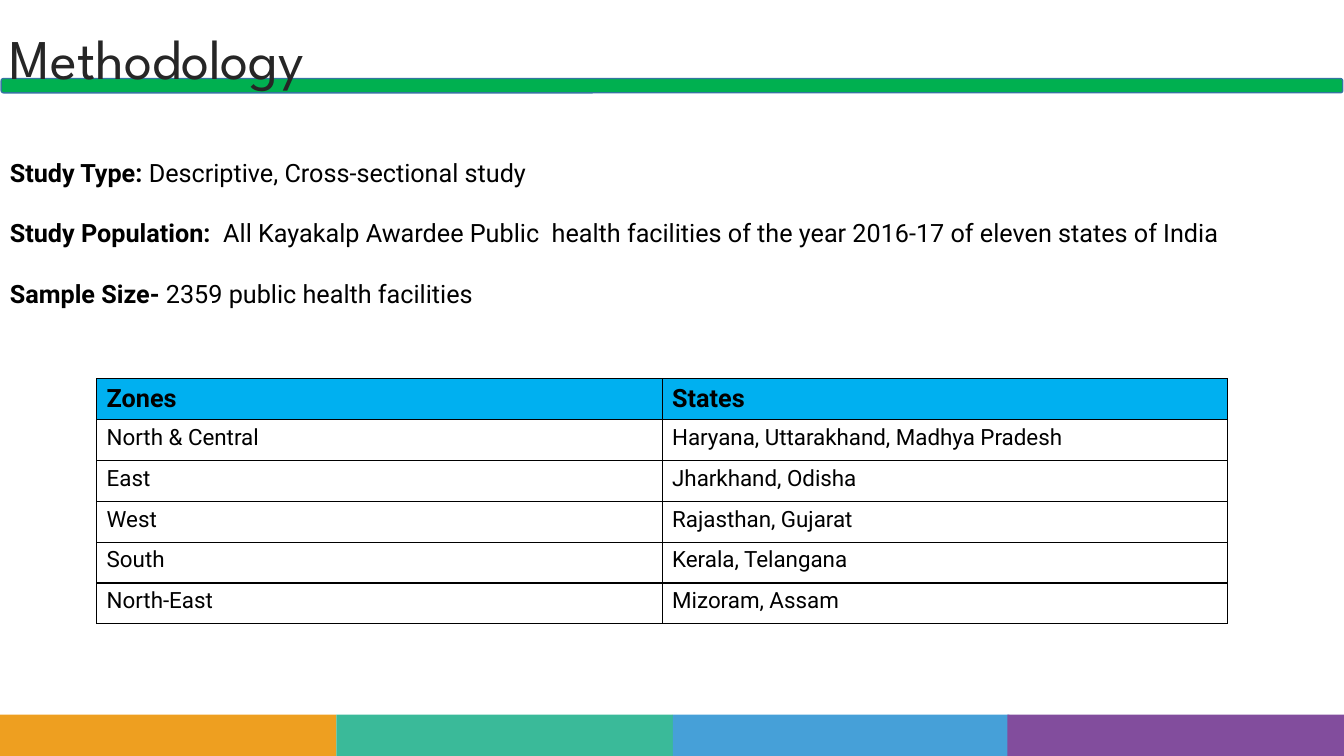
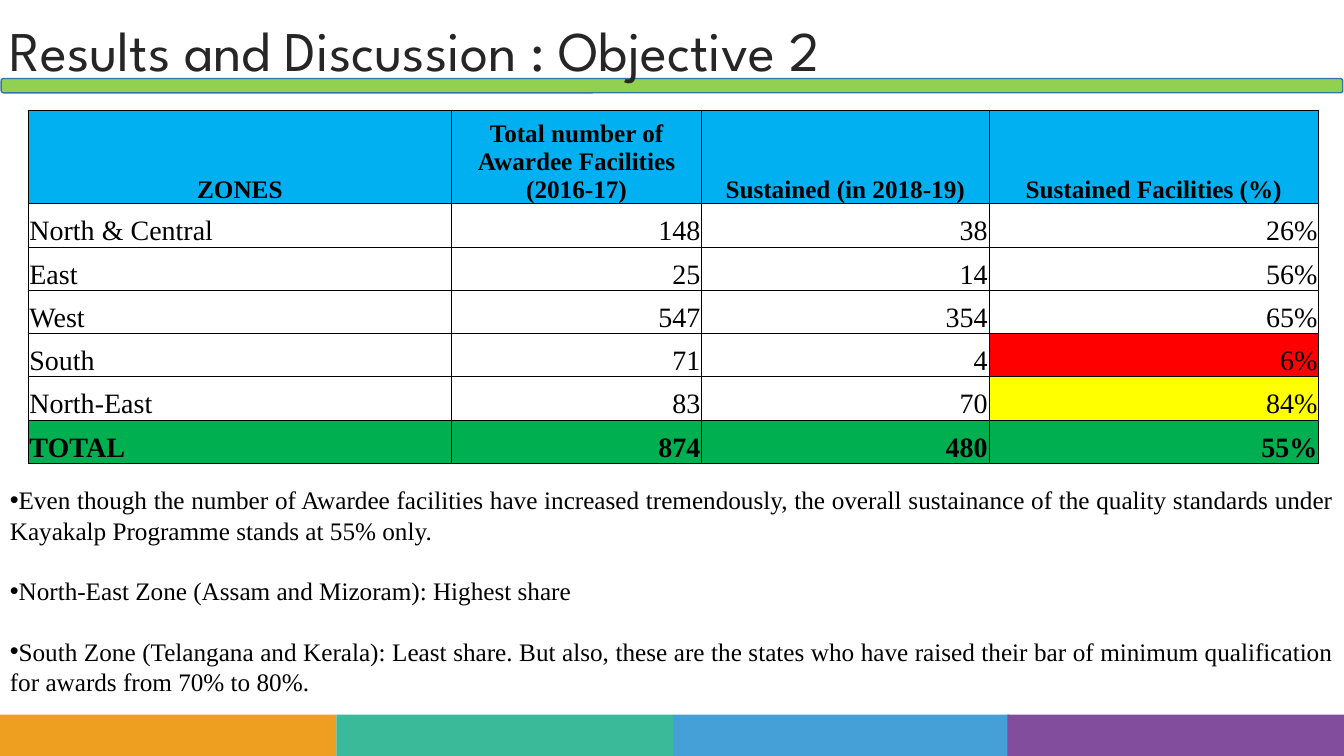
from dataclasses import dataclass

from lxml import etree
from pptx import Presentation
from pptx.dml.color import RGBColor
from pptx.enum.shapes import MSO_SHAPE
from pptx.enum.text import MSO_ANCHOR, PP_ALIGN
from pptx.oxml.ns import qn
from pptx.util import Cm, Pt

RECTANGLE, ROUNDED = MSO_SHAPE.RECTANGLE, MSO_SHAPE.ROUNDED_RECTANGLE
TOP, MIDDLE, BOTTOM = MSO_ANCHOR.TOP, MSO_ANCHOR.MIDDLE, MSO_ANCHOR.BOTTOM
LEFT, CENTER, RIGHT = PP_ALIGN.LEFT, PP_ALIGN.CENTER, PP_ALIGN.RIGHT
JUSTIFY = PP_ALIGN.JUSTIFY

WIDTH, HEIGHT = 33.87, 19.05
COLORS = {
    "title": "262626", "text": "000000", "paper": "FFFFFF", "outline": "3476A0",
    "orange": "EE9F20", "teal": "3ABA99", "blue": "46A0D8", "purple": "824D9D",
    "green": "00B050", "lime": "92D050", "header": "00B0F0",
    "worst": "FF0000", "best": "FFFF00",
}
FOOTER = ("orange", "teal", "blue", "purple")
TITLE_FONT, SANS, SERIF = "League Spartan", "Roboto", "Times New Roman"
BODY_PITCH = 21.6


@dataclass
class TableStyle:
    """Look of one table."""

    font: str
    body_size: int
    border: float
    anchor: int
    header_align: int
    value_align: int
    insets: tuple


def color(name):
    """Return the palette colour of that name."""
    return RGBColor.from_string(COLORS[name])


class Deck:
    """Hold the shared style and the current slide."""

    def __init__(self):
        """Start a widescreen presentation."""
        self.presentation = Presentation()
        self.presentation.slide_width = Cm(WIDTH)
        self.presentation.slide_height = Cm(HEIGHT)
        self.slide = None

    def new_slide(self, title, band, title_top, title_height, title_spacing):
        """Add a slide with its footer, title band and title."""
        self.slide = self.presentation.slides.add_slide(self.presentation.slide_layouts[6])
        part_width = 8.48
        for index, part in enumerate(FOOTER):
            left = min(index * part_width, WIDTH - part_width)
            self.block(RECTANGLE, left, 18.01, part_width, 1.04, part)
        self.block(ROUNDED, 0.03, 1.98, 33.81, 0.36, band, "outline")
        frame = self.text_frame(0, title_top, WIDTH, title_height, MIDDLE)
        heading = frame.paragraphs[0]
        heading.line_spacing = title_spacing
        self.run(heading, title, TITLE_FONT, 40, "title")

    def block(self, preset, left, top, width, height, fill, outline=None):
        """Draw a filled preset shape."""
        shape = self.slide.shapes.add_shape(preset, Cm(left), Cm(top), Cm(width), Cm(height))
        shape.shadow.inherit = False
        shape.fill.solid()
        shape.fill.fore_color.rgb = color(fill)
        if outline:
            shape.line.color.rgb = color(outline)
            shape.line.width = Pt(1)
        else:
            shape.line.fill.background()

    def text_frame(self, left, top, width, height, anchor=TOP):
        """Add a wrapping text box and return its frame."""
        box = self.slide.shapes.add_textbox(Cm(left), Cm(top), Cm(width), Cm(height))
        box.text_frame.word_wrap = True
        box.text_frame.vertical_anchor = anchor
        return box.text_frame

    def run(self, paragraph, text, font, size, ink="text", bold=False):
        """Append one styled run."""
        run = paragraph.add_run()
        run.text = text
        run.font.name = font
        run.font.size = Pt(size)
        run.font.bold = bold
        run.font.color.rgb = color(ink)

    def body(self, top, height, font, items, align=LEFT, bullet=None):
        """Write spaced paragraphs, each a list of (text, bold) runs."""
        frame = self.text_frame(0, top, WIDTH, height)
        for index, item in enumerate(items):
            paragraph = frame.add_paragraph() if index else frame.paragraphs[0]
            paragraph.alignment = align
            paragraph.line_spacing = Pt(BODY_PITCH)
            paragraph.space_before = Pt(BODY_PITCH if index else 0)
            if bullet:
                properties = paragraph._p.get_or_add_pPr()
                etree.SubElement(properties, qn("a:buFont"), typeface="Arial")
                etree.SubElement(properties, qn("a:buChar"), char=bullet)
            for text, bold in item:
                self.run(paragraph, text, font, 18, bold=bold)

    def table(self, left, top, widths, heights, rows, style, fills, bold_rows=(0,)):
        """Draw a bordered table; fills maps (row, column) to a colour."""
        grid = self.slide.shapes.add_table(
            len(rows), len(widths), Cm(left), Cm(top), Cm(sum(widths)), Cm(sum(heights))
        ).table
        for column, width in zip(grid.columns, widths):
            column.width = Cm(width)
        for r, (values, height) in enumerate(zip(rows, heights)):
            grid.rows[r].height = Cm(height)
            for c, value in enumerate(values):
                cell = grid.cell(r, c)
                cell.vertical_anchor = style.anchor
                (cell.margin_left, cell.margin_top,
                 cell.margin_right, cell.margin_bottom) = map(Cm, style.insets)
                self.border(cell, style.border)
                cell.fill.solid()
                cell.fill.fore_color.rgb = color(fills.get((r, c), "paper"))
                paragraph = cell.text_frame.paragraphs[0]
                if r == 0:
                    paragraph.alignment = style.header_align
                else:
                    paragraph.alignment = style.value_align if c else LEFT
                size = style.body_size if r else 18
                self.run(paragraph, value, style.font, size, bold=r in bold_rows)

    def border(self, cell, width):
        """Rule all four sides of a cell."""
        properties = cell._tc.get_or_add_tcPr()
        for side in ("a:lnL", "a:lnR", "a:lnT", "a:lnB"):
            line = etree.SubElement(properties, qn(side), w=str(Pt(width)))
            fill = etree.SubElement(line, qn("a:solidFill"))
            etree.SubElement(fill, qn("a:srgbClr"), val=COLORS["text"])


def methodology(deck):
    """Build the study design slide."""
    deck.new_slide("Methodology", "green", 0.38, 1.98, 1.07)
    deck.body(3.83, 4.2, SANS, [
        [("Study Type:", True), (" Descriptive, Cross-sectional study", False)],
        [("Study Population:  ", True),
         ("All Kayakalp Awardee Public  health facilities of the year 2016-17 "
          "of eleven states of India", False)],
        [("Sample Size- ", True), ("2359 public health facilities", False)],
    ])
    zones = [
        ("Zones", "States"),
        ("North & Central", "Haryana, Uttarakhand, Madhya Pradesh"),
        ("East", "Jharkhand, Odisha"),
        ("West", "Rajasthan, Gujarat"),
        ("South", "Kerala, Telangana"),
        ("North-East", "Mizoram, Assam"),
    ]
    style = TableStyle(SANS, 16, 1, TOP, LEFT, LEFT, (0.25, 0.13, 0.25, 0.13))
    fills = {(0, column): "header" for column in range(2)}
    deck.table(2.44, 9.54, [14.25] * 2, [1.03] * len(zones), zones, style, fills)


def results(deck):
    """Build the sustained facilities slide."""
    deck.new_slide("Results and Discussion : Objective 2", "lime", 0, 2.69, 0.9)
    findings = [
        "Even though the number of Awardee facilities have increased tremendously, "
        "the overall sustainance of the quality standards under Kayakalp Programme "
        "stands at 55% only.",
        "North-East Zone (Assam and Mizoram): Highest share",
        "South Zone (Telangana and Kerala): Least share. But also, these are the states "
        "who have raised their bar of minimum qualification for awards from 70% to 80%.",
    ]
    deck.body(12.09, 5.64, SERIF, [[(finding, False)] for finding in findings], JUSTIFY, "•")
    sustained = [
        ("ZONES", "Total number of Awardee Facilities (2016-17)",
         "Sustained (in 2018-19)", "Sustained Facilities (%)"),
        ("North & Central", "148", "38", "26%"),
        ("East", "25", "14", "56%"),
        ("West", "547", "354", "65%"),
        ("South", "71", "4", "6%"),
        ("North-East", "83", "70", "84%"),
        ("TOTAL", "874", "480", "55%"),
    ]
    total = len(sustained) - 1
    fills = {(4, 3): "worst", (5, 3): "best"}
    for column in range(4):
        fills[0, column] = "header"
        fills[total, column] = "green"
    style = TableStyle(SERIF, 20, 0.5, BOTTOM, CENTER, RIGHT, (0.03, 0.03, 0.03, 0))
    deck.table(0.71, 2.79, [10.67, 6.3, 7.24, 8.31], [2.34] + [1.09] * total,
               sustained, style, fills, (0, total))


def main():
    """Build and save the presentation."""
    deck = Deck()
    methodology(deck)
    results(deck)
    deck.presentation.save("out.pptx")


if __name__ == "__main__":
    main()
